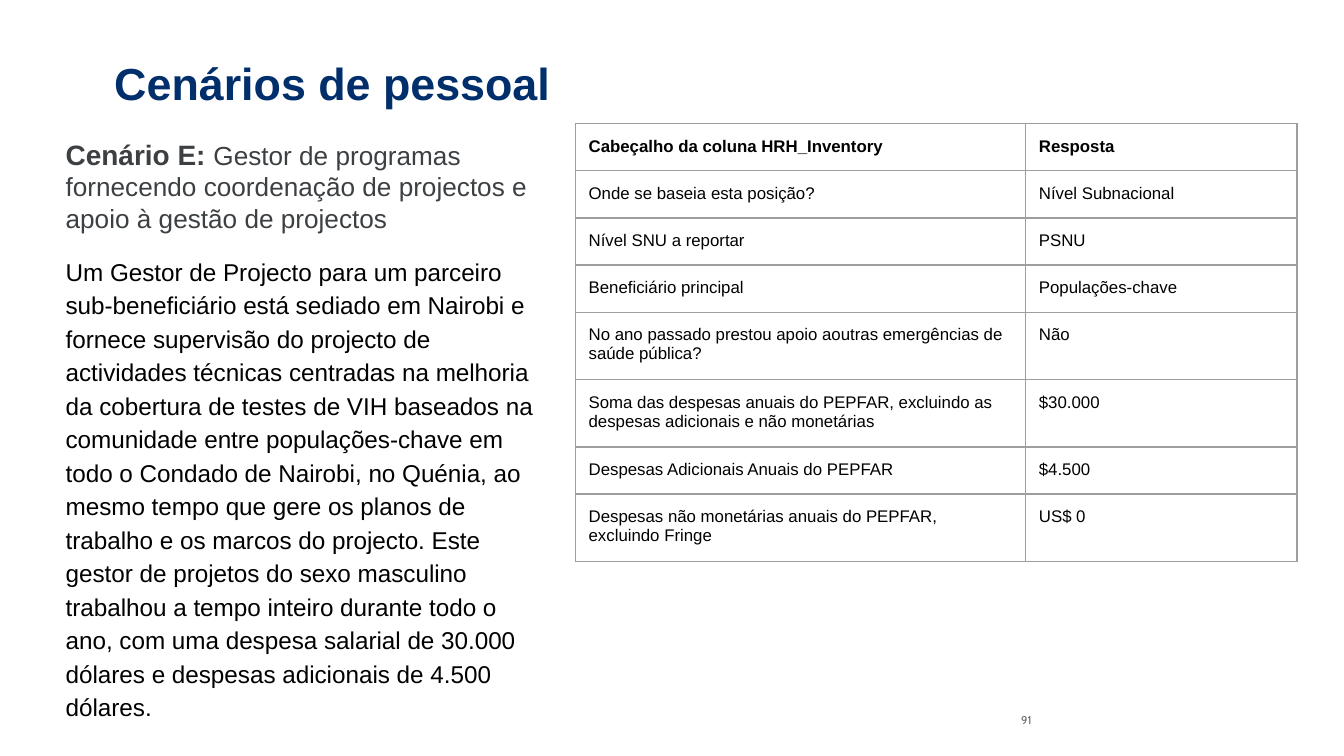
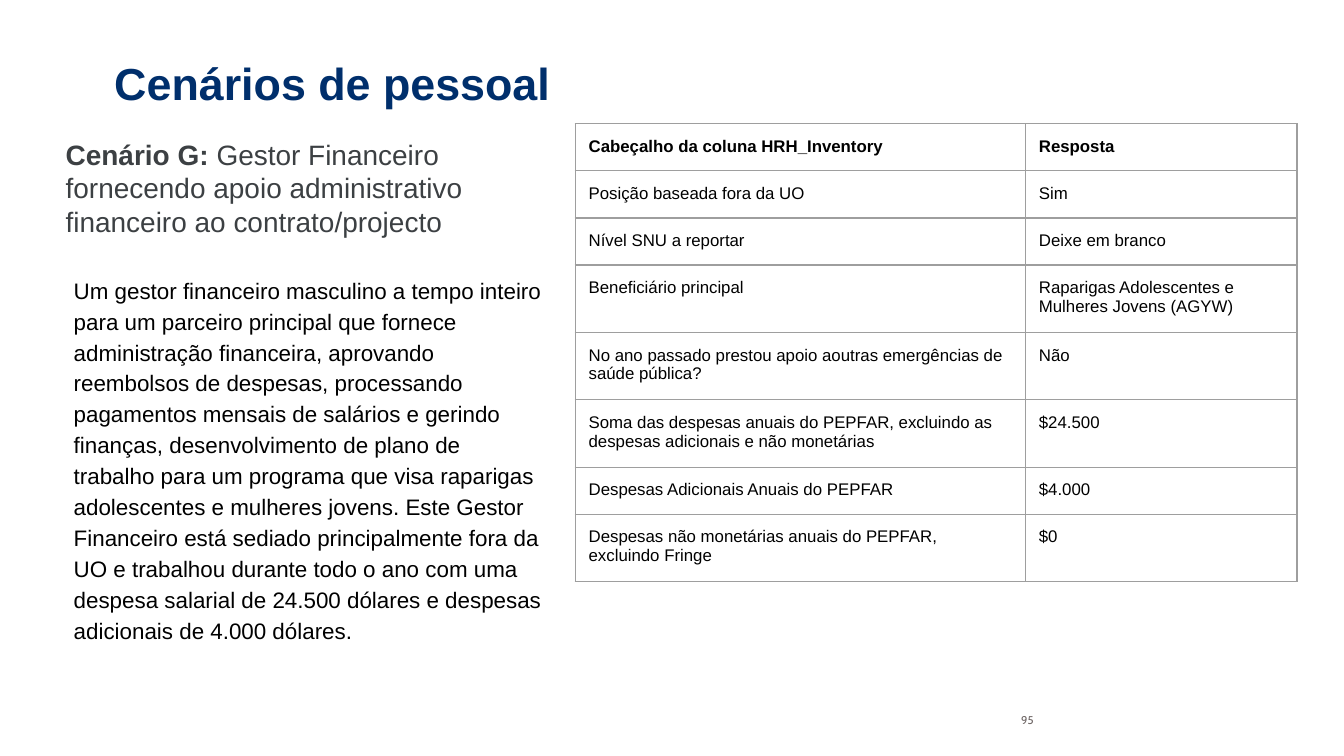
from lxml.etree import SubElement
from pptx import Presentation
from pptx.dml.color import RGBColor
from pptx.enum.text import MSO_ANCHOR as Anchor, MSO_AUTO_SIZE as AutoSize, PP_ALIGN as Align
from pptx.oxml.ns import qn
from pptx.util import Pt

PX = 4572  # 200 px to the inch

NAVY = RGBColor(0x00, 0x2F, 0x6C)
BLACK = RGBColor(0x00, 0x00, 0x00)
CHARCOAL = RGBColor(0x3C, 0x40, 0x43)
FOOTER_GRAY = RGBColor(0x6C, 0x64, 0x63)
BORDER_GRAY = RGBColor(0x9E, 0x9E, 0x9E)
WHITE = RGBColor(0xFF, 0xFF, 0xFF)

TITLE = "Cenários de pessoal"
HEADER = ("Cabeçalho da coluna HRH_Inventory", "Resposta")
QUESTIONS = [
    "Nível SNU a reportar",
    "Beneficiário principal",
    "No ano passado prestou apoio aoutras emergências de saúde pública?",
    "Soma das despesas anuais do PEPFAR, excluindo as despesas adicionais e não monetárias",
    "Despesas Adicionais Anuais do PEPFAR",
    "Despesas não monetárias anuais do PEPFAR, excluindo Fringe",
]
COLUMN_WIDTHS = (670, 404)
ROW_HEIGHTS = (70, 70, 70, 70, 62, 62, 56, 56)  # minimums; rows grow with their text
INSET = 20

SCENARIOS = [
    {
        "number": "91",
        "label": "Cenário E: ",
        "role": "Gestor de programas fornecendo coordenação de projectos e apoio à gestão de projectos",
        "role_size": 14,
        "heading_height": 186,
        "body": "Um Gestor de Projecto para um parceiro sub-beneficiário está sediado em Nairobi e "
                "fornece supervisão do projecto de actividades técnicas centradas na melhoria da "
                "cobertura de testes de VIH baseados na comunidade entre populações-chave em todo o "
                "Condado de Nairobi, no Quénia, ao mesmo tempo que gere os planos de trabalho e os "
                "marcos do projecto. Este gestor de projetos do sexo masculino trabalhou a tempo "
                "inteiro durante todo o ano, com uma despesa salarial de 30.000 dólares e despesas "
                "adicionais de 4.500 dólares.",
        "body_size": 13,
        "body_box": (78, 356, 742, 812),
        "first_question": "Onde se baseia esta posição?",
        "answers": ["Nível Subnacional", "PSNU", "Populações-chave", "Não",
                    "$30.000", "$4.500", "US$ 0"],
        "table_height": 650,
    },
    {
        "number": "95",
        "label": "Cenário G: ",
        "role": "Gestor Financeiro fornecendo apoio administrativo financeiro ao contrato/projecto",
        "role_size": 15,
        "heading_height": 192,
        "body": "Um gestor financeiro masculino a tempo inteiro para um parceiro principal que fornece "
                "administração financeira, aprovando reembolsos de despesas, processando pagamentos "
                "mensais de salários e gerindo finanças, desenvolvimento de plano de trabalho para um "
                "programa que visa raparigas adolescentes e mulheres jovens. Este Gestor Financeiro "
                "está sediado principalmente fora da UO e trabalhou durante todo o ano com uma despesa "
                "salarial de 24.500 dólares e despesas adicionais de 4.000 dólares.",
        "body_size": 12,
        "body_box": (90, 386, 742, 684),
        "first_question": "Posição baseada fora da UO",
        "answers": ["Sim", "Deixe em branco", "Raparigas Adolescentes e Mulheres Jovens (AGYW)",
                    "Não", "$24.500", "$4.000", "$0"],
        "table_height": 680,
    },
]


def write_text(shape, runs, box, inset=INSET, anchor=Anchor.TOP, auto_size=AutoSize.NONE):
    """Place a text shape and fill its first paragraph with (text, size, colour, bold, font) runs."""
    shape.left, shape.top, shape.width, shape.height = (n * PX for n in box)
    frame = shape.text_frame
    frame.word_wrap = True
    frame.auto_size = auto_size
    frame.vertical_anchor = anchor
    frame.margin_left = frame.margin_right = INSET * PX
    frame.margin_top = frame.margin_bottom = inset * PX
    paragraph = frame.paragraphs[0]
    paragraph.alignment = Align.LEFT
    add_runs(paragraph, runs)
    return paragraph


def add_runs(paragraph, runs):
    for text, size, color, bold, font_name in runs:
        run = paragraph.add_run()
        run.text = text
        run.font.size = Pt(size)
        run.font.color.rgb = color
        run.font.bold = bold
        run.font.name = font_name


presentation = Presentation()
presentation.slide_width = 2000 * PX
presentation.slide_height = 1125 * PX
title_only = presentation.slide_layouts[5]

for scenario in SCENARIOS:
    slide = presentation.slides.add_slide(title_only)
    slide.background.fill.solid()
    slide.background.fill.fore_color.rgb = WHITE

    write_text(slide.shapes.title, [(TITLE, 24, NAVY, True, "Arial")],
               (150, 83, 1700, 100), anchor=Anchor.BOTTOM)

    number_box = slide.shapes.add_textbox(0, 0, 0, 0)
    write_text(number_box, [(scenario["number"], 6, FOOTER_GRAY, False, "Cabin")],
               (1500, 1052, 466, 40), inset=10, anchor=Anchor.MIDDLE)

    heading_box = slide.shapes.add_textbox(0, 0, 0, 0)
    heading_runs = [(scenario["label"], 15, CHARCOAL, True, "Arial"),
                    (scenario["role"], scenario["role_size"], CHARCOAL, False, "Arial")]
    write_text(heading_box, heading_runs, (78, 184, 792, scenario["heading_height"]),
               auto_size=AutoSize.SHAPE_TO_FIT_TEXT)

    body_box = slide.shapes.add_textbox(0, 0, 0, 0)
    paragraph = write_text(body_box,
                           [(scenario["body"], scenario["body_size"], BLACK, False, "Arial")],
                           scenario["body_box"], auto_size=AutoSize.SHAPE_TO_FIT_TEXT)
    paragraph.line_spacing = 1.15
    paragraph.space_after = Pt(12)

    questions = [scenario["first_question"]] + QUESTIONS
    rows = [HEADER] + list(zip(questions, scenario["answers"]))
    table_frame = slide.shapes.add_table(len(rows), 2, 856 * PX, 184 * PX,
                                         sum(COLUMN_WIDTHS) * PX, scenario["table_height"] * PX)
    table = table_frame.table
    table.first_row = False
    table.horz_banding = False
    for column, width in zip(table.columns, COLUMN_WIDTHS):
        column.width = width * PX
    for row_index, (texts, height) in enumerate(zip(rows, ROW_HEIGHTS)):
        table.rows[row_index].height = height * PX
        for column_index, text in enumerate(texts):
            cell = table.cell(row_index, column_index)
            cell.margin_left = cell.margin_right = INSET * PX
            cell.margin_top = cell.margin_bottom = INSET * PX
            add_runs(cell.text_frame.paragraphs[0],
                     [(text, 9, BLACK, row_index == 0, "Arial")])
            properties = cell._tc.get_or_add_tcPr()
            for side in ("a:lnL", "a:lnR", "a:lnT", "a:lnB"):
                line = SubElement(properties, qn(side), w=str(Pt(0.75)))
                line_fill = SubElement(line, qn("a:solidFill"))
                SubElement(line_fill, qn("a:srgbClr"), val=str(BORDER_GRAY))
            cell.fill.background()
    table_frame.height = scenario["table_height"] * PX

presentation.save("out.pptx")
